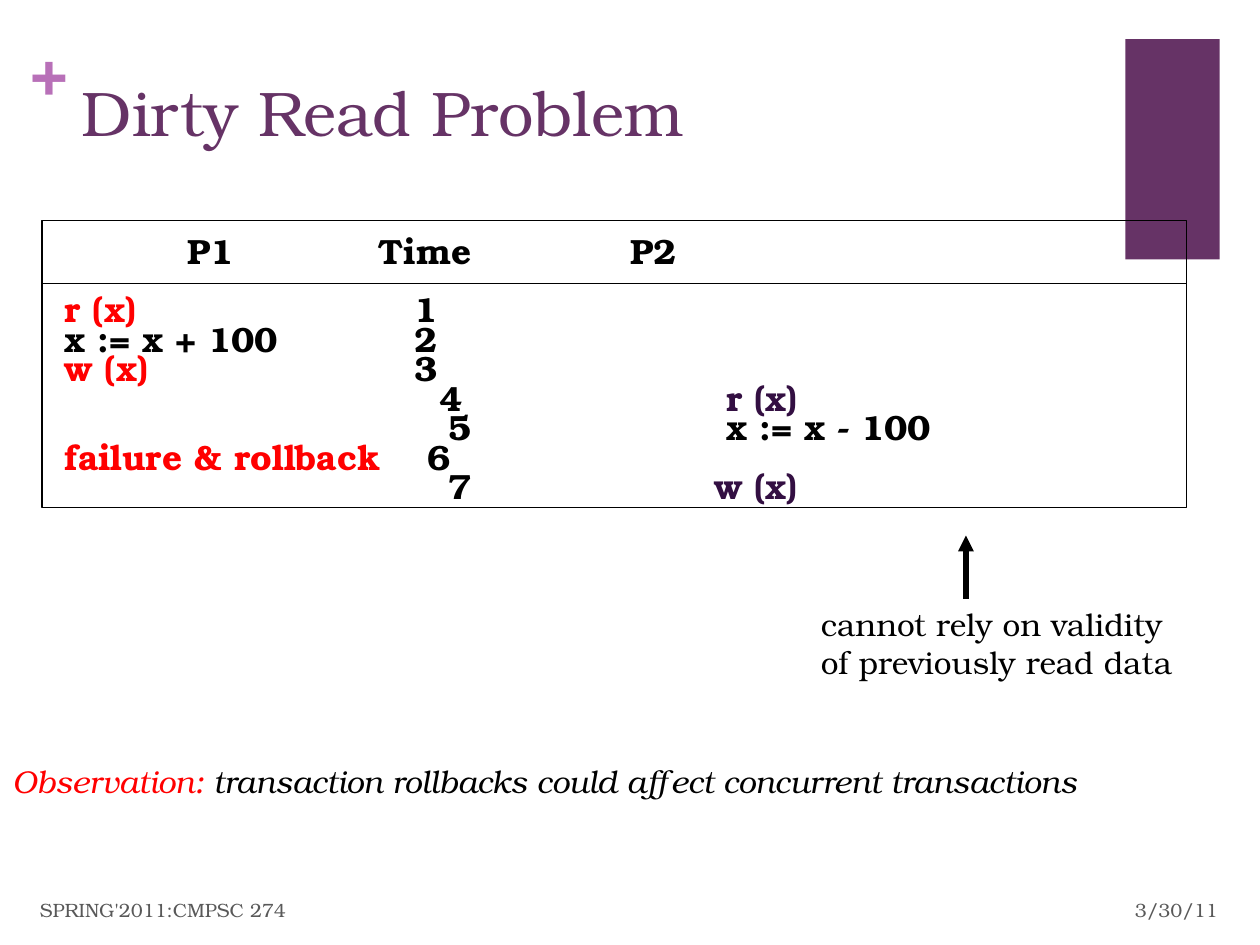
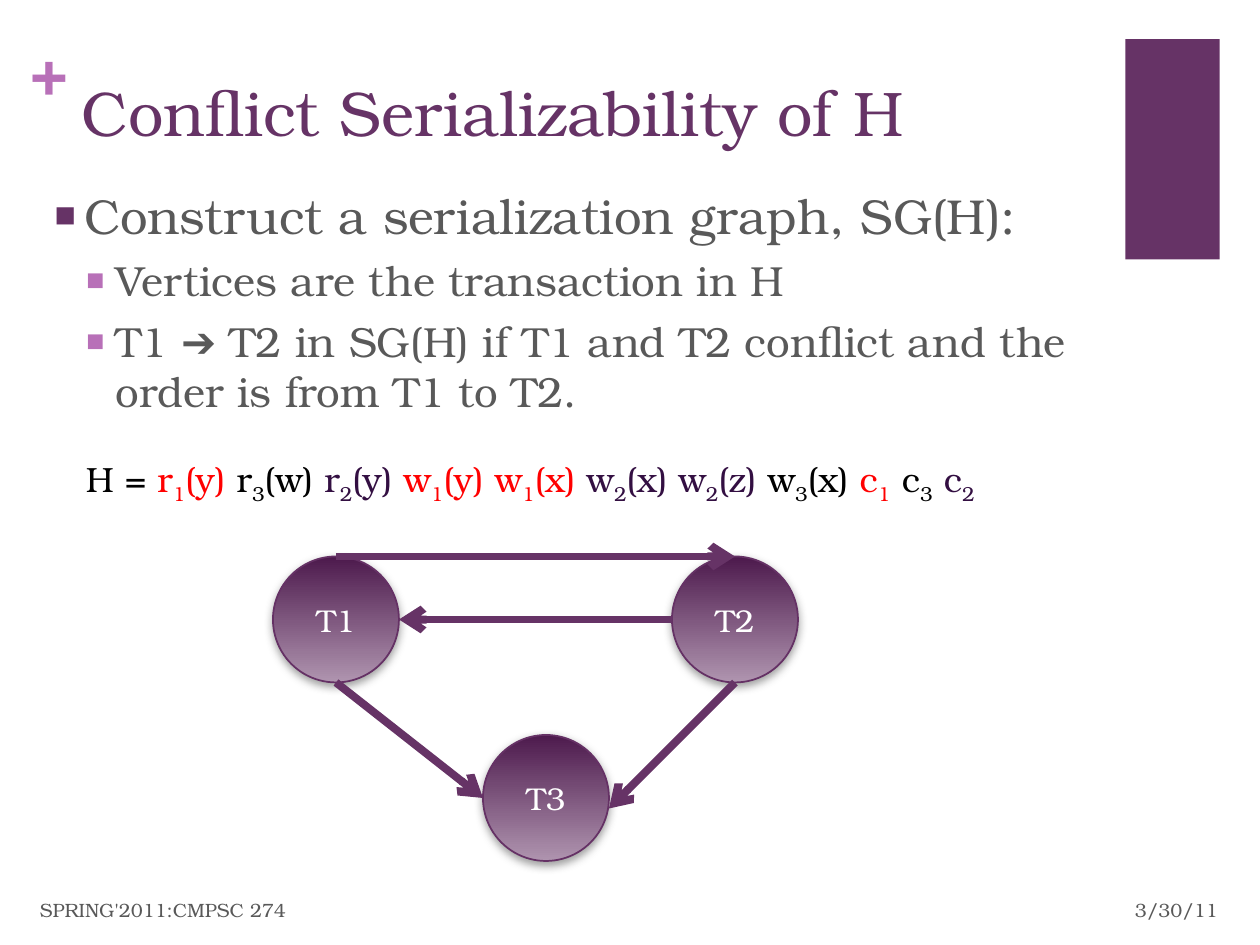
import itertools
from dataclasses import dataclass, field
from typing import NamedTuple

import pptx
import pptx.dml.color
import pptx.enum.dml
import pptx.enum.shapes
import pptx.enum.text
import pptx.oxml
import pptx.oxml.ns
import pptx.slide
import pptx.util

Pt = pptx.util.Pt
RGB = pptx.dml.color.RGBColor.from_string
Align = pptx.enum.text.PP_ALIGN
Anchor = pptx.enum.text.MSO_ANCHOR
ShapeKind = pptx.enum.shapes.MSO_SHAPE


@dataclass(frozen=True)
class Theme:
    font: str = "TeX Gyre Bonum"
    plum: str = "663366"
    orchid: str = "B870B8"
    gray: str = "595959"
    ink: str = "000000"
    red: str = "FF0000"
    violet: str = "330F42"
    white: str = "FFFFFF"
    node_top: str = "4D1A4D"
    node_bottom: str = "AF94AF"
    node_line: str = "653165"
    shadow: str = "808080"
    title: int = 36
    heading: int = 28
    bullet: int = 24
    code: int = 20
    label: int = 18
    footer: int = 11


THEME = Theme()


class Box(NamedTuple):
    left: float
    top: float
    width: float
    height: float


class Point(NamedTuple):
    x: float
    y: float


class Span(NamedTuple):
    text: str
    size: int
    color: str = THEME.ink
    bold: bool = False
    italic: bool = False
    subscript: bool = False


@dataclass
class Line:
    spans: list[Span]
    format: dict = field(default_factory=dict)
    indent: float = 0
    bullet_color: str = ""
    tab_stops: tuple[float, ...] = ()


class Step(NamedTuple):
    first: str
    time: str
    second: str
    time_stop: float
    second_stop: float
    first_color: str = THEME.red
    second_color: str = THEME.violet


class Edge(NamedTuple):
    source: str
    source_side: str
    target: str
    target_side: str
    drop: float = 0


STEPS = [
    Step("r (x)", "1", "", 200, 378),
    Step("x := x + 100", "2", "", 200, 378, first_color=THEME.ink),
    Step("w (x)", "3", "", 200, 378),
    Step("", "4", "r (x)", 214, 378),
    Step("", "5", "x := x - 100", 219, 378, second_color=THEME.ink),
    Step("failure & rollback", "6", "", 207, 378),
    Step("", "7", "w (x)", 219, 371),
]

HISTORY = [
    ("H = ", THEME.ink),
    ("r1(y)", THEME.red),
    (" r3(w) ", THEME.ink),
    ("r2(y) ", THEME.violet),
    ("w1(y) w1(x) ", THEME.red),
    ("w2(x) w2(z)", THEME.violet),
    (" w3(x) ", THEME.ink),
    ("c1", THEME.red),
    (" c3 ", THEME.ink),
    ("c2", THEME.violet),
]

NODE_SIZE = 72
NODES = {"T1": Point(156, 318), "T3": Point(276, 420), "T2": Point(384, 318)}
SIDES = {"top": Point(0.5, 0), "left": Point(0, 0.5), "bottom": Point(0.5, 1), "right": Point(1, 0.5)}
EDGES = [
    Edge("T2", "bottom", "T3", "right", drop=6),
    Edge("T1", "bottom", "T3", "left"),
    Edge("T1", "top", "T2", "top"),
    Edge("T2", "left", "T1", "right"),
]


def apply(target: object, values: dict) -> None:
    for name, value in values.items():
        setattr(target, name, value)


def append_xml(parent, tag: str, content: str = "", **attributes: object):
    listed = " ".join(f'{name}="{value}"' for name, value in attributes.items())
    element = pptx.oxml.parse_xml(f'<a:{tag} {pptx.oxml.ns.nsdecls("a")} {listed}>{content}</a:{tag}>')
    parent.append(element)
    return element


def write_lines(frame, lines: list[Line]) -> None:
    for index, line in enumerate(lines):
        paragraph = frame.paragraphs[0] if index == 0 else frame.add_paragraph()
        apply(paragraph, line.format)
        properties = paragraph._p.get_or_add_pPr()
        if line.bullet_color:
            properties.set("marL", str(Pt(line.indent)))
            properties.set("indent", str(-Pt(18)))
            append_xml(properties, "buClr", f'<a:srgbClr val="{line.bullet_color}"/>')
            append_xml(properties, "buSzPct", val=75000)
            append_xml(properties, "buFont", typeface=THEME.font)
            append_xml(properties, "buChar", char="■")
        if line.tab_stops:
            tabs = append_xml(properties, "tabLst")
            for stop in line.tab_stops:
                append_xml(tabs, "tab", pos=Pt(stop), algn="l")
        for span in line.spans:
            run = paragraph.add_run()
            run.text = span.text
            apply(run.font, {"name": THEME.font, "size": Pt(span.size), "bold": span.bold, "italic": span.italic})
            run.font.color.rgb = RGB(span.color)
            if span.subscript:
                run._r.get_or_add_rPr().set("baseline", "-25000")


def add_text(slide: pptx.slide.Slide, box: Box, lines: list[Line], **frame_format: object) -> None:
    shape = slide.shapes.add_textbox(*map(Pt, box))
    apply(shape.text_frame, {"word_wrap": True, **frame_format})
    write_lines(shape.text_frame, lines)


def add_rectangle(slide: pptx.slide.Slide, box: Box, fill: str = "", line: str = "") -> None:
    shape = slide.shapes.add_shape(ShapeKind.RECTANGLE, *map(Pt, box))
    shape.shadow.inherit = False
    for paint, color in ((shape.fill, fill), (shape.line.fill, line)):
        if color:
            paint.solid()
            paint.fore_color.rgb = RGB(color)
        else:
            paint.background()
    if line:
        shape.line.width = Pt(0.75)


def add_line(slide: pptx.slide.Slide, start: Point, end: Point, color: str, width: float, head: str = "") -> None:
    connector = slide.shapes.add_connector(
        pptx.enum.shapes.MSO_CONNECTOR.STRAIGHT, *map(Pt, (*start, *end)))
    connector.line.color.rgb = RGB(color)
    connector.line.width = Pt(width)
    if head:
        append_xml(connector.line._get_or_add_ln(), "tailEnd", type=head)
    append_xml(connector._element.spPr, "effectLst")


def add_node(slide: pptx.slide.Slide, name: str, corner: Point) -> None:
    shape = slide.shapes.add_shape(ShapeKind.OVAL, *map(Pt, (*corner, NODE_SIZE, NODE_SIZE)))
    shape.fill.gradient()
    shape.fill.gradient_angle = 270
    for stop, color, position in zip(shape.fill.gradient_stops, (THEME.node_top, THEME.node_bottom), (0, 1)):
        stop.color.rgb = RGB(color)
        stop.position = position
    shape.line.color.rgb = RGB(THEME.node_line)
    shape.line.width = Pt(1)
    shape.shadow.inherit = False
    effects = shape._element.spPr.find(pptx.oxml.ns.qn("a:effectLst"))
    append_xml(effects, "outerShdw", f'<a:srgbClr val="{THEME.shadow}"><a:alpha val="75000"/></a:srgbClr>',
               blurRad=Pt(5), dist=Pt(2), dir=5400000, rotWithShape=0)
    shape.text_frame.vertical_anchor = Anchor.MIDDLE
    write_lines(shape.text_frame, [Line([Span(name, THEME.label, THEME.white)], {"alignment": Align.CENTER})])


def side_point(node: str, side: str, drop: float = 0) -> Point:
    corner, share = NODES[node], SIDES[side]
    return Point(corner.x + share.x * NODE_SIZE, corner.y + share.y * NODE_SIZE + drop)


def add_base_slide(presentation, title: str) -> pptx.slide.Slide:
    slide = presentation.slides.add_slide(presentation.slide_layouts[6])
    add_rectangle(slide, Box(643, 22.3, 54, 126), fill=THEME.plum)
    no_margins = {f"margin_{side}": 0 for side in ("left", "top", "right", "bottom")}
    add_text(slide, Box(17.3, 18, 21, 44), [Line([Span("+", THEME.title, THEME.orchid, bold=True)])], **no_margins)
    add_text(slide, Box(39.6, 38.2, 595, 52), [Line([Span(title, THEME.title, THEME.plum)])])
    footers = [
        (Box(535, 505.4, 168, 29), "3/30/11", Align.RIGHT),
        (Box(15.8, 505.4, 482, 29), "SPRING'2011:CMPSC 274", Align.LEFT),
    ]
    for box, text, alignment in footers:
        line = Line([Span(text, THEME.footer, THEME.gray)], {"alignment": alignment})
        add_text(slide, box, [line], vertical_anchor=Anchor.MIDDLE)
    return slide


def schedule_lines() -> list[Line]:
    def code(text: str, color: str = THEME.ink) -> Span:
        return Span(text, THEME.code, color, bold=True)

    spacing = {"line_spacing": 0.7}
    lines = [Line([code("\tP1\tTime\tP2")], {**spacing, "space_after": Pt(16.8)}, tab_stops=(70, 179, 323))]
    for step in STEPS:
        spans = [code(step.first, step.first_color)] if step.first else []
        spans.append(code(f"\t{step.time}"))
        if step.second:
            spans.append(code(f"\t{step.second}", step.second_color))
        lines.append(Line(spans, spacing, tab_stops=(step.time_stop, step.second_stop)))
    return lines


def build_dirty_read(presentation) -> None:
    slide = add_base_slide(presentation, "Dirty Read Problem")
    add_text(slide, Box(30, 134, 518.4, 161), schedule_lines())
    add_rectangle(slide, Box(24, 126, 654, 164), line=THEME.ink)
    add_line(slide, Point(24, 162), Point(678, 162), THEME.ink, 0.75)
    add_line(slide, Point(552, 342), Point(552, 306), THEME.ink, 3, "triangle")
    add_text(slide, Box(462, 342, 235, 65), [
        Line([Span(text, THEME.label)]) for text in ("cannot rely on validity", "of previously read data")])
    add_text(slide, Box(0, 432, 706, 36), [Line([
        Span("Observation:", THEME.label, THEME.red, italic=True),
        Span(" transaction rollbacks could affect concurrent transactions", THEME.label, italic=True),
    ])])


def build_serializability(presentation) -> None:
    slide = add_base_slide(presentation, "Conflict Serializability of H")
    heading = Span("Construct a serialization graph, SG(H):", THEME.heading, THEME.gray)
    rules = ("Vertices are the transaction in H",
             "T1 ➔ T2 in SG(H) if T1 and T2 conflict and the order is from T1 to T2.")
    add_text(slide, Box(23, 102.2, 595, 162), [
        Line([heading], {"space_before": Pt(20)}, 18, THEME.plum),
        *(Line([Span(rule, THEME.bullet, THEME.gray)], {"level": 1, "space_before": Pt(6)}, 36, THEME.orchid)
          for rule in rules),
    ])
    history = [
        Span("".join(letters), THEME.code, color, subscript=is_index)
        for text, color in HISTORY
        for is_index, letters in itertools.groupby(text, str.isdigit)
    ]
    add_text(slide, Box(42, 258, 576, 31), [Line(history)])
    for name, corner in NODES.items():
        add_node(slide, name, corner)
    for edge in EDGES:
        start = side_point(edge.source, edge.source_side)
        end = side_point(edge.target, edge.target_side, edge.drop)
        add_line(slide, start, end, THEME.plum, 4.5, "arrow")


def main() -> None:
    presentation = pptx.Presentation()
    apply(presentation, {"slide_width": Pt(720), "slide_height": Pt(540)})
    build_dirty_read(presentation)
    build_serializability(presentation)
    presentation.save("out.pptx")


if __name__ == "__main__":
    main()
